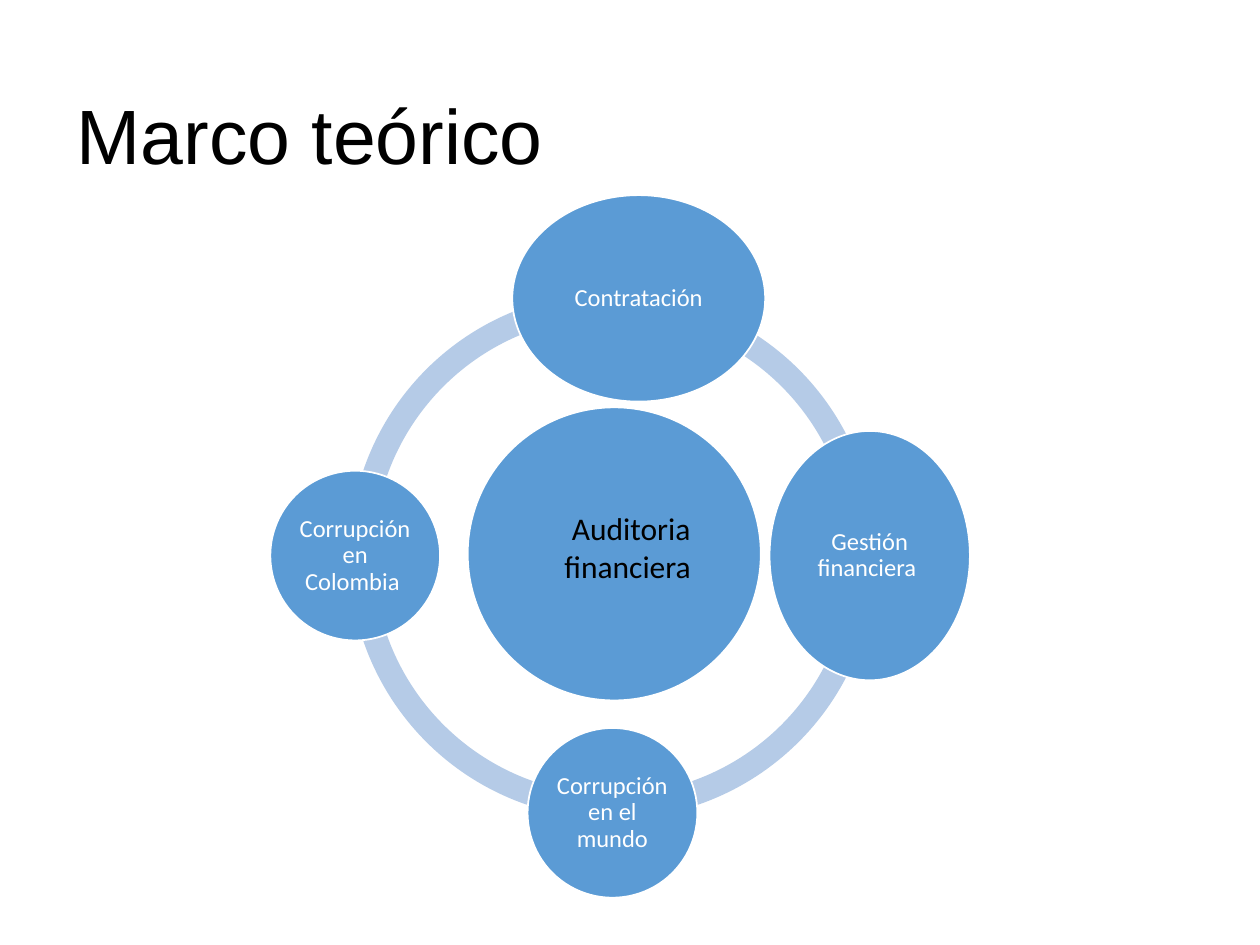
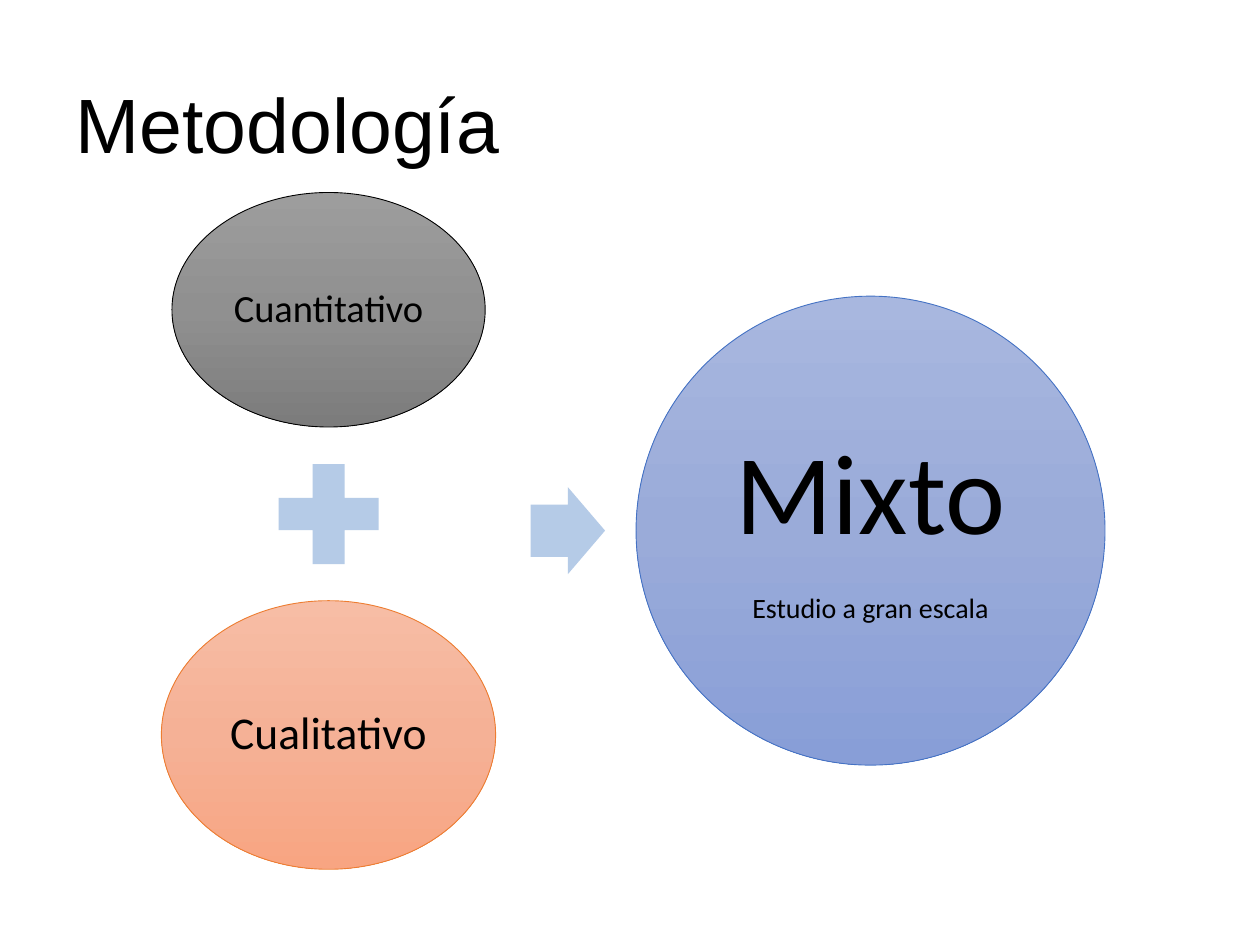
from copy import deepcopy
from pptx import Presentation
from pptx.dml.color import RGBColor
from pptx.enum.shapes import MSO_SHAPE
from pptx.enum.text import MSO_ANCHOR, MSO_AUTO_SIZE, PP_ALIGN
from pptx.util import Pt

BLACK = RGBColor(0x00, 0x00, 0x00)
WHITE = RGBColor(0xFF, 0xFF, 0xFF)
BLUE = RGBColor(0x5B, 0x9B, 0xD5)
PALE_BLUE = RGBColor(0xB5, 0xCB, 0xE7)
ROYAL_BLUE = RGBColor(0x44, 0x72, 0xC4)
ORANGE = RGBColor(0xED, 0x7D, 0x31)
GRAY_FADE = (RGBColor(0x9D, 0x9D, 0x9D), RGBColor(0x90, 0x90, 0x90), RGBColor(0x7C, 0x7C, 0x7C))
ORANGE_FADE = (RGBColor(0xF7, 0xBD, 0xA5), RGBColor(0xF5, 0xB1, 0x96), RGBColor(0xF8, 0xA5, 0x82))
BLUE_FADE = (RGBColor(0xA8, 0xB7, 0xDF), RGBColor(0x9A, 0xAB, 0xD9), RGBColor(0x88, 0x9E, 0xD7))


class Deck:
    title_font = "Arial"
    body_font = "Calibri"

    def __init__(self):
        self.prs = Presentation()
        self.prs.slide_width, self.prs.slide_height = Pt(720), Pt(540)
        self.s = None

    def format(self, p, size, color, font, align, line_spacing=0.9):
        p.alignment = align
        p.line_spacing = line_spacing
        for r in p.runs:
            r.font.name = font
            r.font.size = Pt(size)
            r.font.color.rgb = color

    def slide(self, title, left, top):
        self.s = self.prs.slides.add_slide(self.prs.slide_layouts[5])
        sp = self.s.shapes.title
        sp.left, sp.top, sp.width, sp.height = Pt(left), Pt(top), Pt(648), Pt(84)
        tf = sp.text_frame
        tf.text = title
        tf.auto_size = MSO_AUTO_SIZE.NONE
        tf.vertical_anchor = MSO_ANCHOR.MIDDLE
        self.format(tf.paragraphs[0], 44, BLACK, self.title_font, PP_ALIGN.LEFT)

    def shape(self, kind, center, size, fill=PALE_BLUE, adjustments=()):
        (x, y), (w, h) = center, size
        sp = self.s.shapes.add_shape(kind, Pt(x - w / 2), Pt(y - h / 2), Pt(w), Pt(h))
        sp.shadow.inherit = False
        sp.line.fill.background()
        for i, value in enumerate(adjustments):
            sp.adjustments[i] = value
        if isinstance(fill, RGBColor):
            sp.fill.solid()
            sp.fill.fore_color.rgb = fill
        else:
            self.fade(sp, fill)
        return sp

    def fade(self, sp, colors):
        sp.fill.gradient()
        sp.fill.gradient_angle = 270
        first = sp.fill.gradient_stops[0]._gs
        first.addnext(deepcopy(first))
        for stop, position, color in zip(sp.fill.gradient_stops, (0, 0.5, 1), colors):
            stop.position = position
            stop.color.rgb = color

    def ellipse(self, center, size, fill=BLUE, line=WHITE, line_width=1,
                lines=(), color=WHITE, inset=1.4):
        sp = self.shape(MSO_SHAPE.OVAL, center, size, fill)
        sp.line.color.rgb = line
        sp.line.width = Pt(line_width)
        tf = sp.text_frame
        tf.word_wrap = True
        tf.vertical_anchor = MSO_ANCHOR.MIDDLE
        tf.margin_left = tf.margin_right = tf.margin_top = tf.margin_bottom = Pt(inset)
        for i, (text, font_size) in enumerate(lines):
            p = tf.add_paragraph() if i else tf.paragraphs[0]
            p.text = text
            self.format(p, font_size, color, self.body_font, PP_ALIGN.CENTER)
            if i < len(lines) - 1:
                p.space_after = Pt(20)

    def textbox(self, text, left, top, width, height, size):
        tf = self.s.shapes.add_textbox(Pt(left), Pt(top), Pt(width), Pt(height)).text_frame
        tf.word_wrap = True
        tf.text = text
        self.format(tf.paragraphs[0], size, BLACK, self.body_font, PP_ALIGN.CENTER, 1.0)


def theory_slide(deck):
    deck.slide("Marco teórico", 36.5, 37.5)
    cx, cy, radius = 350, 317.5, 147
    for start, end in ((107.84, 165.36), (54, 108), (0, 54), (165.36, 0.16)):
        deck.shape(MSO_SHAPE.BLOCK_ARC, (cx, cy), (301, 301), adjustments=(start, end, 0.046))
    deck.ellipse((351, 316.5), (167.5, 167.5))
    topics = (
        ("Contratación", 15, -radius, 144.5, 118),
        ("Gestión financiera ", radius, 0, 114.5, 142.5),
        ("Corrupción en el mundo", 0, radius, 97, 97),
        ("Corrupción en Colombia ", -radius, 0, 97, 97),
    )
    for text, dx, dy, w, h in topics:
        deck.ellipse((cx + dx, cy + dy), (w, h), lines=[(text, 14)])
    deck.textbox("Auditoria financiera ", 312.5, 287.5, 96.5, 51, 18)


def method_slide(deck):
    deck.slide("Metodología", 36, 31.5)
    inputs_x, result_y = 187.75, 303.25
    deck.ellipse((inputs_x, 177), (179, 134), GRAY_FADE, BLACK, 0.5,
                 [("Cuantitativo", 22)], BLACK, 2)
    deck.shape(MSO_SHAPE.MATH_PLUS, (inputs_x, 293.75), (77.75, 77.75))
    deck.ellipse((inputs_x, 420), (191, 153.5), ORANGE_FADE, ORANGE, 0.5,
                 [("Cualitativo", 26)], BLACK, 3)
    deck.shape(MSO_SHAPE.RIGHT_ARROW, (324.5, result_y), (42.5, 49.75), adjustments=(0.6, 0.5))
    deck.ellipse((497.5, result_y), (268, 268), BLUE_FADE, ROYAL_BLUE, 0.5,
                 [("Mixto", 65), ("Estudio a gran escala", 16)], BLACK, 6.5)


def main():
    deck = Deck()
    theory_slide(deck)
    method_slide(deck)
    deck.prs.save("out.pptx")


if __name__ == "__main__":
    main()
